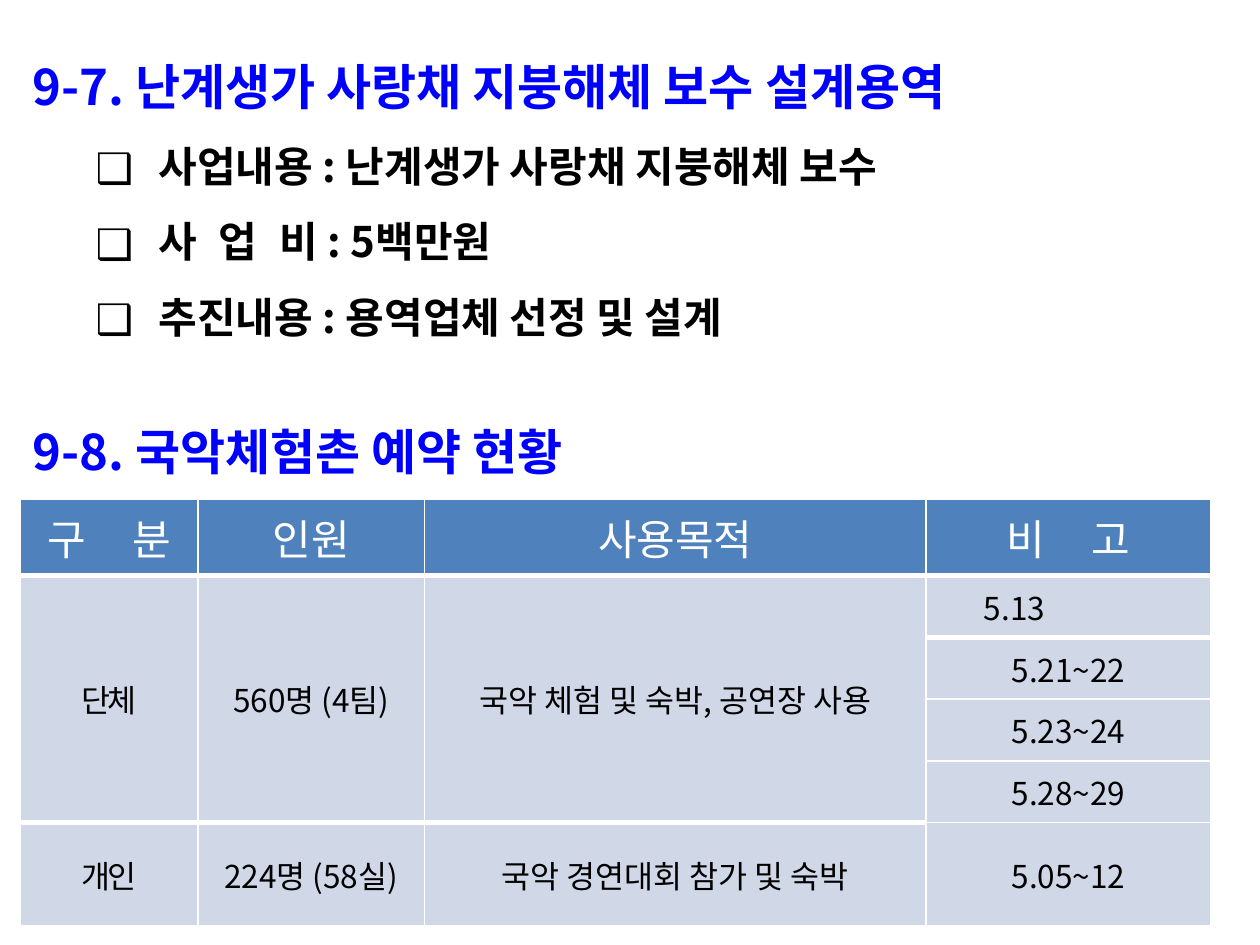
from lxml.etree import Element, SubElement
from pptx import Presentation
from pptx.dml.color import RGBColor
from pptx.enum.text import MSO_ANCHOR, PP_ALIGN
from pptx.oxml.ns import qn
from pptx.util import Inches, Pt

FONT = "Noto Sans CJK KR"
HEADING = dict(size=Pt(28), bold=True, color="0000FF")
ITEM = dict(size=Pt(24), bold=True, color="000000")
HEAD_CELL = dict(size=Pt(24), bold=False, color="FFFFFF")
BODY_CELL = dict(size=Pt(18), bold=False, color="000000")

# Content: a text is a list of (words, letter spacing in points)
SECTIONS = [
    (0.21, 2.9, "9-7. 난계생가 사랑채 지붕해체 보수 설계용역", [
        [("사업내용 : 난계생가 사랑채 지붕해체 보수", 0)],
        [("사 업 ", 3.5), ("비 : 5백만원", 0)],
        [("추진내용 : 용역업체 선정 및 설계", 0)],
    ]),
    (3.11, 0.8, "9-8. 국악체험촌 예약 현황", []),
]
COLUMNS = [1.41, 1.8, 3.98, 2.26]
ROWS = [0.61, 0.49, 0.49, 0.49, 0.49, 0.82]
HEADERS = [
    [("구", 0), (" ", 21), ("분", 0)],
    [("인원", 0)],
    [("사용목적", 0)],
    [("비", 0), (" ", 21), ("고", 0)],
]
GROUPS = [
    ("단체", "560명 (4팀)", "국악 체험 및 숙박, 공연장 사용",
     ["5.13", "5.21~22", "5.23~24", "5.28~29"]),
    ("개인", "224명 (58실)", "국악 경연대회 참가 및 숙박", ["5.05~12"]),
]


def rgb(value):
    return RGBColor.from_string(value)


def add_runs(p, runs, style):
    for words, spacing in runs:
        r = p.add_run()
        r.text = words
        r.font.name = FONT
        for name, value in style.items():
            if name == "color":
                r.font.color.rgb = rgb(value)
            else:
                setattr(r.font, name, value)
        rPr = r._r.get_or_add_rPr()
        SubElement(rPr, qn("a:ea")).set("typeface", FONT)
        if spacing:
            rPr.set("spc", str(round(spacing * 100)))


def set_indent(p, left, first=0.0):
    pPr = p._p.get_or_add_pPr()
    pPr.set("marL", str(Inches(left)))
    pPr.set("indent", str(Inches(first)))
    return pPr


def add_section(s, top, height, heading, items):
    box = s.shapes.add_textbox(Inches(0.16), Inches(top), Inches(9.61), Inches(height))
    tf = box.text_frame
    tf.word_wrap = False
    p = tf.paragraphs[0]
    set_indent(p, 0.58, -0.58)
    p.line_spacing = 1.4
    add_runs(p, [(heading, 0)], HEADING)
    for runs in items:
        p = tf.add_paragraph()
        pPr = set_indent(p, 1, -0.5)
        p.line_spacing = 1.5
        color = SubElement(pPr, qn("a:buClr"))
        SubElement(color, qn("a:srgbClr")).set("val", "000000")
        SubElement(pPr, qn("a:buFont")).set("typeface", FONT)
        SubElement(pPr, qn("a:buChar")).set("char", "❑")
        add_runs(p, runs, ITEM)


def set_border(cell, side, width):
    line = Element(qn(f"a:{side}"), w=str(Pt(width)))
    fill = SubElement(line, qn("a:solidFill"))
    SubElement(fill, qn("a:srgbClr")).set("val", "FFFFFF")
    cell._tc.get_or_add_tcPr().insert(0, line)


def fill_cell(cell, runs, style):
    cell.vertical_anchor = MSO_ANCHOR.MIDDLE
    p = cell.text_frame.paragraphs[0]
    p.alignment = PP_ALIGN.CENTER
    add_runs(p, runs, style)
    return p


prs = Presentation()
prs.slide_width, prs.slide_height = Inches(10), Inches(7.5)
s = prs.slides.add_slide(prs.slide_layouts[6])

# Headings with their bullet items
for section in SECTIONS:
    add_section(s, *section)

# Reservation table; thin white rules come from the default table style
table = s.shapes.add_table(
    len(ROWS), len(COLUMNS), Inches(0.16), Inches(3.96),
    Inches(sum(COLUMNS)), Inches(sum(ROWS))).table
for column, width in zip(table.columns, COLUMNS):
    column.width = Inches(width)
for i, (row, height) in enumerate(zip(table.rows, ROWS)):
    row.height = Inches(height)
    for cell in row.cells:
        cell.fill.solid()
        cell.fill.fore_color.rgb = rgb("D0D8E8" if i else "4F81BD")

# Header row with a thick rule below
for c, runs in enumerate(HEADERS):
    fill_cell(table.cell(0, c), runs, HEAD_CELL)
    set_border(table.cell(0, c), "lnB", 3)
    set_border(table.cell(1, c), "lnT", 3)

# Each group spans as many rows as it has dates
top = 1
for kind, people, purpose, dates in GROUPS:
    for c, (words, spacing) in enumerate([(kind, -1.5), (people, 0), (purpose, 0)]):
        cell = table.cell(top, c)
        if len(dates) > 1:
            cell.merge(table.cell(top + len(dates) - 1, c))
        fill_cell(cell, [(words, spacing)], BODY_CELL)
    for i, date in enumerate(dates):
        p = fill_cell(table.cell(top + i, 3), [(date, 0)], BODY_CELL)
        if date == "5.13":
            p.alignment = PP_ALIGN.LEFT
            set_indent(p, 0.36)
    top += len(dates)

prs.save("out.pptx")
